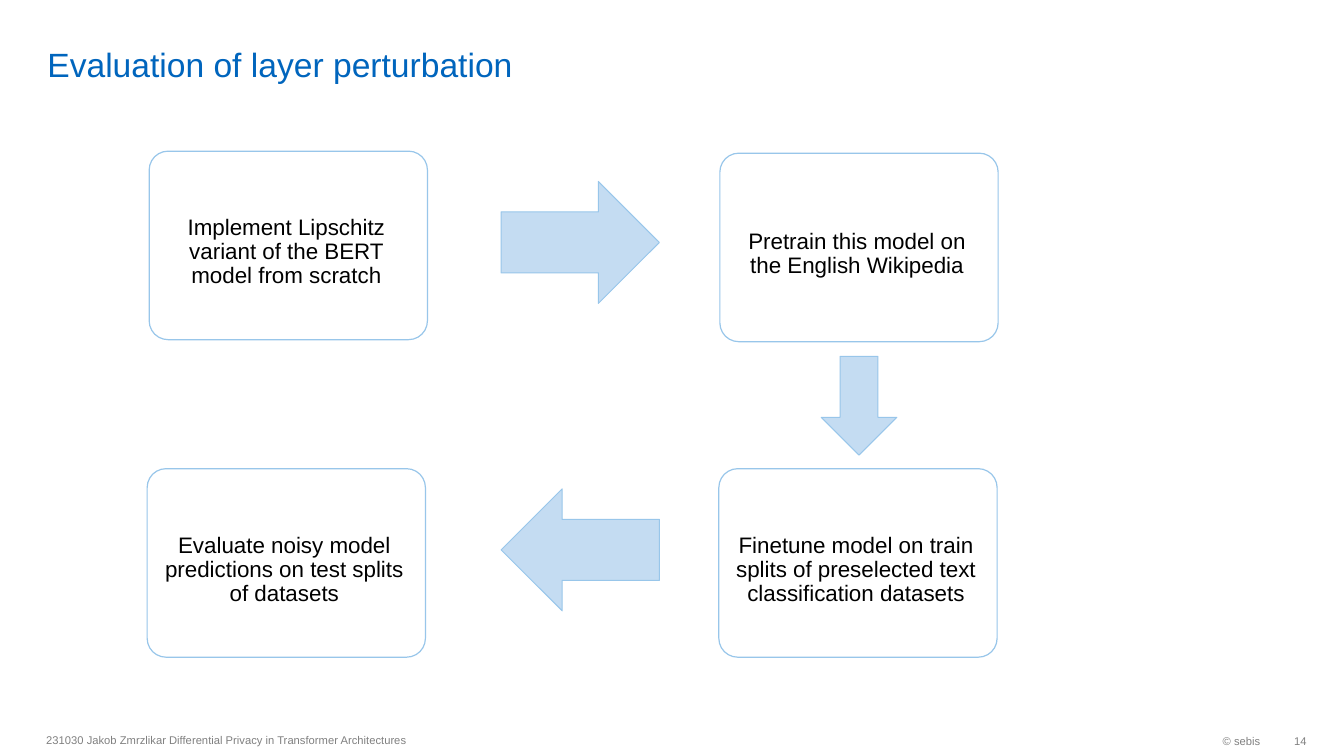
from pptx import Presentation
from pptx import util as u
from pptx.dml.color import RGBColor
from pptx.enum import shapes, text

BLUE, GREY, BLACK, WHITE = "0065BD", "808080", "000000", "FFFFFF"
ARROW_FILL, OUTLINE = "C4DCF2", "98C6EA"
LEFT, CENTER, RIGHT = text.PP_ALIGN.LEFT, text.PP_ALIGN.CENTER, text.PP_ALIGN.RIGHT
MIDDLE, BOTTOM = text.MSO_ANCHOR.MIDDLE, text.MSO_ANCHOR.BOTTOM

CARD_SIZE = (2.76, 1.87)
STEPS = [
    (1.48, 1.5, "Implement Lipschitz variant of the BERT model from scratch"),
    (7.14, 1.52, "Pretrain this model on the English Wikipedia"),
    (7.13, 4.65, "Finetune model on train splits of preselected text classification datasets"),
    (1.46, 4.65, "Evaluate noisy model predictions on test splits of datasets"),
]
ARROWS = [
    ((4.97, 1.8, 1.57, 1.21), 0),
    ((8.03, 3.65, 0.98, 0.75), 90),
    ((4.97, 4.85, 1.57, 1.21), 180),
]
FOOTER = [
    ((0.36, 7.18, 6.3, 0.32), LEFT, 0.1,
     "231030 Jakob Zmrzlikar Differential Privacy in Transformer Architectures"),
    ((10.26, 7.19, 2.34, 0.32), RIGHT, 0.1, "© sebis"),
    ((12.6, 7.19, 0.36, 0.32), RIGHT, 0, "14"),
]


def color(hex_string):
    return RGBColor.from_string(hex_string)


def inches(box):
    return [u.Inches(length) for length in box]


def apply(target, values):
    for name, value in values.items():
        setattr(target, name, value)


def write(holder, words, size, ink, align, anchor, insets, spacing=1.0):
    frame = holder.text_frame
    frame.text = words
    sides = ("margin_left", "margin_top", "margin_right", "margin_bottom")
    apply(frame, {"word_wrap": True, "auto_size": text.MSO_AUTO_SIZE.NONE,
                  "vertical_anchor": anchor, **dict(zip(sides, inches(insets)))})
    paragraph = frame.paragraphs[0]
    apply(paragraph, {"alignment": align, "line_spacing": spacing,
                      "space_before": u.Pt(0)})
    apply(paragraph.font, {"name": "Arial", "size": u.Pt(size), "bold": False})
    paragraph.font.color.rgb = color(ink)


def add_outlined(parent, kind, box, fill, width):
    outlined = parent.add_shape(kind, *inches(box))
    outlined.shadow.inherit = False
    outlined.fill.solid()
    outlined.fill.fore_color.rgb = color(fill)
    outlined.line.color.rgb = color(OUTLINE)
    outlined.line.width = u.Pt(width)
    return outlined


def add_title(slide, box):
    title = slide.shapes.title
    apply(title, dict(zip(("left", "top", "width", "height"), inches(box))))
    write(title, "Evaluation of layer perturbation", 24, BLUE, LEFT, BOTTOM,
          (0.1, 0, 0.1, 0))


def add_step(slide, box, words):
    left, top, width, height = box
    step = slide.shapes.add_group_shape().shapes
    card = add_outlined(step, shapes.MSO_SHAPE.ROUNDED_RECTANGLE, box, WHITE, 0.85)
    card.adjustments[0] = 0.1
    # The label sits slightly below the middle of its card
    label = step.add_textbox(
        *inches((left + 0.06, top + 0.05, width - 0.16, height + 0.04)))
    write(label, words, 16, BLACK, CENTER, MIDDLE, (0.06,) * 4, 0.9)


def add_arrow(slide, box, rotation):
    arrow = add_outlined(slide.shapes, shapes.MSO_SHAPE.RIGHT_ARROW, box,
                         ARROW_FILL, 0.75)
    arrow.rotation = rotation


def add_footer_part(slide, box, align, right_inset, words):
    part = slide.shapes.add_textbox(*inches(box))
    write(part, words, 8, GREY, align, MIDDLE, (0.1, 0.05, right_inset, 0.05))


def main():
    deck = Presentation()
    deck.slide_width, deck.slide_height = inches((13.33, 7.5))
    slide = deck.slides.add_slide(deck.slide_layouts[5])

    # Heading and footer
    add_title(slide, (0.37, 0.05, 11.58, 0.79))
    for part in FOOTER:
        add_footer_part(slide, *part)

    # Process steps, clockwise from the top left, and the arrows between them
    for left, top, words in STEPS:
        add_step(slide, (left, top, *CARD_SIZE), words)
    for box, rotation in ARROWS:
        add_arrow(slide, box, rotation)

    deck.save("out.pptx")


if __name__ == "__main__":
    main()
